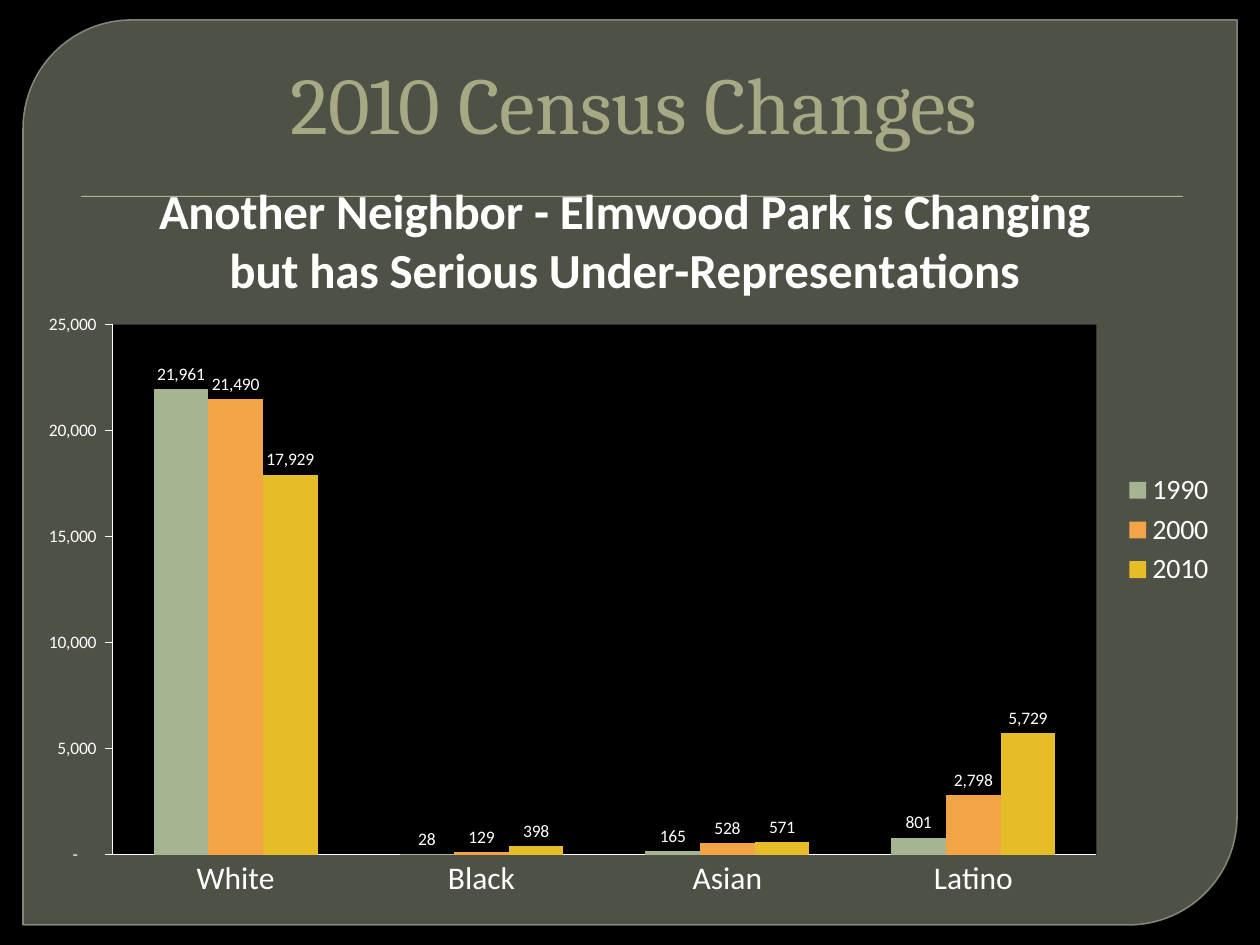
from lxml import etree
from pptx import Presentation
from pptx import util as u
from pptx.chart.data import CategoryChartData
from pptx.dml.color import RGBColor
from pptx.enum import chart as ch, shapes, text
from pptx.oxml import parse_xml
from pptx.oxml.ns import nsdecls, qn

PX = 914400 / 126
BLACK = RGBColor(0x00, 0x00, 0x00)
WHITE = RGBColor(0xFF, 0xFF, 0xFF)
PANEL = RGBColor(0x78, 0x7D, 0x6B)
EDGE = RGBColor(0x8F, 0x94, 0x83)
CREAM = RGBColor(0xFF, 0xF9, 0xB4)
SAGE = RGBColor(0xA5, 0xB5, 0x92)
ORANGE = RGBColor(0xF3, 0xA4, 0x47)
GOLD = RGBColor(0xE7, 0xBC, 0x29)

NUMBER = r'_(* #,##0_);_(* \(#,##0\);_(* "-"??_);_('
GROUPS = ["White", "Black", "Asian", "Latino"]
CENSUS = [
    ("1990", SAGE, (21961, 28, 165, 801)),
    ("2000", ORANGE, (21490, 129, 528, 2798)),
    ("2010", GOLD, (17929, 398, 571, 5729)),
]


def px(n):
    return u.Emu(round(n * PX))


def box(*lengths):
    return [px(n) for n in lengths]


def set_font(font, color=WHITE, **values):
    for name, value in values.items():
        setattr(font, name, value)
    font.color.rgb = color


def set_alpha(fmt, percent):
    color = fmt._xPr.find(".//" + qn("a:srgbClr"))
    etree.SubElement(color, qn("a:alpha"), val=str(percent * 1000))


def add_filled(slide, kind, area, color):
    sp = slide.shapes.add_shape(kind, *box(*area))
    sp.shadow.inherit = False
    sp.fill.solid()
    sp.fill.fore_color.rgb = color
    sp.line.fill.background()
    return sp


def add_backdrop(slide, x, y, w, h):
    slide.background.fill.solid()
    slide.background.fill.fore_color.rgb = BLACK
    # Panel with two rounded corners
    panel = add_filled(slide, shapes.MSO_SHAPE.ROUND_2_DIAG_RECTANGLE,
                       (x, y, w, h), PANEL)
    panel.adjustments[0] = 0.12
    set_alpha(panel.fill, 65)
    panel.line.color.rgb = EDGE
    panel.line.width = u.Pt(0.87)
    set_alpha(panel.line.fill, 88)
    # Rule under the title
    add_filled(slide, shapes.MSO_SHAPE.RECTANGLE,
               (x + 58, y + 176, w - 112, 1), SAGE)


def add_title(slide, x, y, w, h):
    title = slide.shapes.title
    title.left, title.top, title.width, title.height = box(x, y, w, h)
    tf = title.text_frame
    tf.text = "2010 Census Changes"
    tf.vertical_anchor = text.MSO_ANCHOR.BOTTOM
    tf.margin_left = px(20)
    p = tf.paragraphs[0]
    p.alignment = text.PP_ALIGN.CENTER
    set_font(p.runs[0].font, CREAM, name="Cambria", size=u.Pt(46))


def set_plot_area(chart, x, y, w, h):
    """Place and fill the inner plot area; lengths are shares of the chart."""
    area = chart._chartSpace.chart.plotArea
    for old in area.findall(qn("c:layout")):
        area.remove(old)
    marks = "".join(f'<c:{k} val="{v}"/>' for k, v in (
        ("layoutTarget", "inner"), ("xMode", "edge"), ("yMode", "edge"),
        ("x", x), ("y", y), ("w", w), ("h", h)))
    area.insert(0, parse_xml(
        f'<c:layout {nsdecls("c")}><c:manualLayout>{marks}'
        '</c:manualLayout></c:layout>'))
    area.append(parse_xml(
        f'<c:spPr {nsdecls("c", "a")}><a:solidFill>'
        f'<a:srgbClr val="{BLACK}"/></a:solidFill></c:spPr>'))


def add_census_chart(slide, x, y, w, h):
    data = CategoryChartData(number_format="#,##0")
    data.categories = GROUPS
    for name, _, values in CENSUS:
        data.add_series(name, values)
    chart = slide.shapes.add_chart(ch.XL_CHART_TYPE.COLUMN_CLUSTERED,
                                   *box(x, y, w, h), data).chart
    set_font(chart.font, name="Calibri", size=u.Pt(10))

    # Heading and legend
    tf = chart.chart_title.text_frame
    tf.text = ("Another Neighbor - Elmwood Park is Changing "
               "but has Serious Under-Representations")
    set_font(tf.paragraphs[0].runs[0].font,
             name="Calibri", size=u.Pt(28), bold=True)
    chart.chart_title.include_in_layout = False
    chart.has_legend = True
    chart.legend.position = ch.XL_LEGEND_POSITION.RIGHT
    chart.legend.include_in_layout = False
    set_font(chart.legend.font, name="Calibri", size=u.Pt(16))

    # Axes
    marks = ch.XL_TICK_MARK
    for axis, tick, size in ((chart.category_axis, marks.NONE, 18),
                             (chart.value_axis, marks.OUTSIDE, 10)):
        axis.has_major_gridlines = False
        axis.major_tick_mark = tick
        axis.minor_tick_mark = marks.NONE
        axis.format.line.color.rgb = WHITE
        set_font(axis.tick_labels.font, name="Calibri", size=u.Pt(size))
    values = chart.value_axis
    values.minimum_scale, values.maximum_scale = 0, 25000
    values.major_unit = 5000
    values.tick_labels.number_format = NUMBER
    values.tick_labels.number_format_is_linked = False

    # Columns and their labels
    plot = chart.plots[0]
    plot.gap_width, plot.overlap = 150, 0
    plot.vary_by_categories = False
    for series, (_, color, _) in zip(plot.series, CENSUS):
        series.format.fill.solid()
        series.format.fill.fore_color.rgb = color
        labels = series.data_labels
        labels.show_value = True
        labels.number_format = NUMBER
        labels.number_format_is_linked = False
        labels.position = ch.XL_LABEL_POSITION.OUTSIDE_END
        set_font(labels.font, name="Calibri", size=u.Pt(10))
    set_plot_area(chart, 0.076, 0.232, 0.815, 0.692)


def main():
    prs = Presentation()
    prs.slide_width, prs.slide_height = box(1260, 945)
    slide = prs.slides.add_slide(prs.slide_layouts[5])
    add_backdrop(slide, 23, 20, 1214, 905)
    add_title(slide, 63, 35, 1134, 122)
    add_census_chart(slide, 21, 147, 1207, 766)
    prs.save("out.pptx")


if __name__ == "__main__":
    main()
